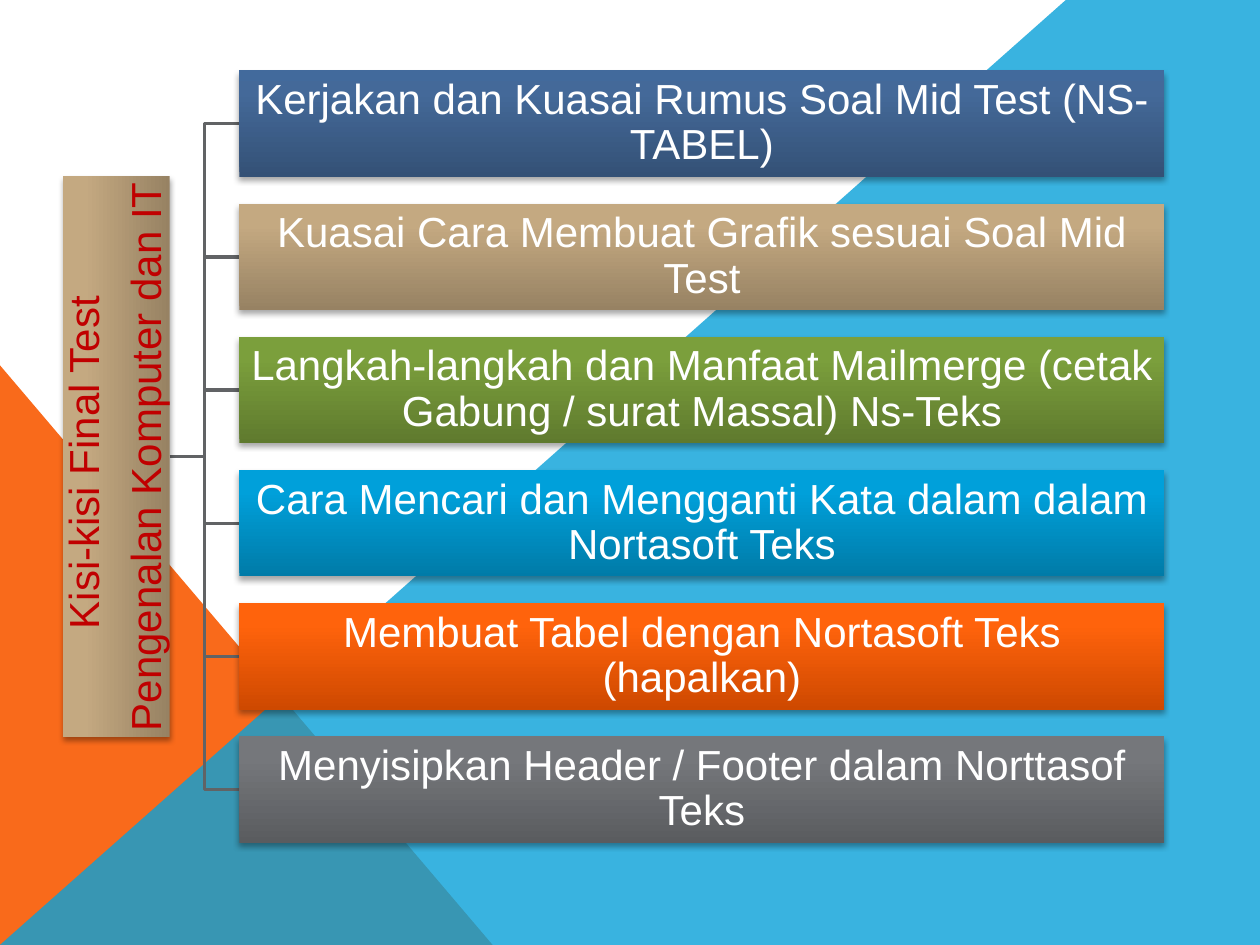
from lxml.etree import SubElement
from pptx import Presentation
from pptx.dml.color import RGBColor
from pptx.enum.shapes import MSO_SHAPE
from pptx.enum.text import MSO_ANCHOR, PP_ALIGN
from pptx.oxml.ns import qn
from pptx.util import Pt

WIDTH, HEIGHT = 720, 540
BAR_LEFT, BAR_TOP, BAR_WIDTH, BAR_HEIGHT = 136.8, 40.2, 528.6, 60.9
BAR_STEP = BAR_HEIGHT * 1.25
ROOT_X, ROOT_LENGTH = 66.6, 320.4

TAN = ("978263", "C4A981", "C6AA80")
ROOT_LINES = ["Kisi-kisi Final Test ", "Pengenalan Komputer dan IT"]
TOPICS = [
    ("Kerjakan dan Kuasai Rumus Soal Mid Test (NS-TABEL)",
     ("345176", "446999", "426A9C")),
    ("Kuasai Cara Membuat Grafik sesuai Soal Mid Test", TAN),
    ("Langkah-langkah dan Manfaat Mailmerge (cetak Gabung / surat Massal) Ns-Teks",
     ("5F7A2E", "7B9F3C", "7CA13B")),
    ("Cara Mencari dan Mengganti Kata dalam dalam Nortasoft Teks",
     ("007BA8", "00A0DA", "00A0DB")),
    ("Membuat Tabel dengan Nortasoft Teks (hapalkan)",
     ("CE4900", "FF630C", "FF640E")),
    ("Menyisipkan Header / Footer dalam Norttasof Teks",
     ("5A5C5F", "75777B", "75787C")),
]

FRAME_FORMAT = {
    "word_wrap": True, "vertical_anchor": MSO_ANCHOR.MIDDLE,
    "margin_left": Pt(1.2), "margin_right": Pt(1.2),
    "margin_top": Pt(1.2), "margin_bottom": Pt(1.2),
}
PARA_FORMAT = {
    "alignment": PP_ALIGN.CENTER, "line_spacing": 0.9, "space_after": Pt(9.5),
}
FONT_FORMAT = {"name": "Arial", "size": Pt(24)}


def color(value):
    return RGBColor.from_string(value)


def apply_format(target, values):
    for name, value in values.items():
        setattr(target, name, value)


def add_color_xml(parent, value, alpha=None):
    node = SubElement(parent, qn("a:srgbClr"), val=value)
    if alpha is not None:
        SubElement(node, qn("a:alpha"), val=str(alpha * 1000))


def fill_solid(shape, value):
    shape.shadow.inherit = False
    shape.fill.solid()
    shape.fill.fore_color.rgb = color(value)
    shape.line.fill.background()


def fill_gradient(shape, colors):
    shape.fill.gradient()
    shape.fill.gradient_angle = 90
    stops = shape._element.spPr.find(qn("a:gradFill")).find(qn("a:gsLst"))
    for stop in list(stops):
        stops.remove(stop)
    for position, value in zip((0, 80, 100), colors):
        stop = SubElement(stops, qn("a:gs"), pos=str(position * 1000))
        add_color_xml(stop, value)


def add_shadow(shape):
    shape.shadow.inherit = False
    effects = shape._element.spPr.find(qn("a:effectLst"))
    shadow = SubElement(effects, qn("a:outerShdw"), blurRad=str(Pt(3.1)),
                        dist=str(Pt(1.8)), dir="5400000", rotWithShape="0")
    add_color_xml(shadow, "000000", 35)


def add_outline(page, points, close):
    points = [(Pt(x), Pt(y)) for x, y in points]
    builder = page.shapes.build_freeform(*points[0])
    builder.add_line_segments(points[1:], close=close)
    return builder.convert_to_shape()


def add_background(page):
    triangle = page.shapes.add_shape(
        MSO_SHAPE.RIGHT_TRIANGLE, 0, Pt(208.8), Pt(281.5), Pt(331.2))
    fill_solid(triangle, "F96A1B")
    corners = [(0, HEIGHT), (609.1, 0), (WIDTH, 0), (WIDTH, HEIGHT)]
    wedge = add_outline(page, corners, True)
    fill_solid(wedge, "08A1D9")
    fill = wedge._element.spPr.find(qn("a:solidFill"))
    SubElement(fill[0], qn("a:alpha"), val="80000")


def add_branch(page, start, end):
    middle = (start[0] + end[0]) / 2
    branch = add_outline(
        page, [start, (middle, start[1]), (middle, end[1]), end], False)
    branch.shadow.inherit = False
    branch.fill.background()
    branch.line.color.rgb = color("616365")
    branch.line.width = Pt(2)


def add_box(page, left, top, width, lines, colors, text_color, rotation=0):
    box = page.shapes.add_shape(
        MSO_SHAPE.RECTANGLE, Pt(left), Pt(top), Pt(width), Pt(BAR_HEIGHT))
    box.rotation = rotation
    fill_gradient(box, colors)
    box.line.fill.background()
    add_shadow(box)
    frame = box.text_frame
    apply_format(frame, FRAME_FORMAT)
    for index, line in enumerate(lines):
        para = frame.add_paragraph() if index else frame.paragraphs[0]
        apply_format(para, PARA_FORMAT)
        span = para.add_run()
        span.text = line
        apply_format(span.font, FONT_FORMAT)
        span.font.color.rgb = color(text_color)


def main():
    deck = Presentation()
    deck.slide_width, deck.slide_height = Pt(WIDTH), Pt(HEIGHT)
    page = deck.slides.add_slide(deck.slide_layouts[6])
    add_background(page)

    # Branches from the root to each topic
    tops = [BAR_TOP + index * BAR_STEP for index in range(len(TOPICS))]
    root_y = (tops[0] + tops[-1] + BAR_HEIGHT) / 2
    for top in reversed(tops):
        add_branch(page, (ROOT_X + BAR_HEIGHT / 2, root_y),
                   (BAR_LEFT, top + BAR_HEIGHT / 2))

    # Root, turned to read upwards
    add_box(page, ROOT_X - ROOT_LENGTH / 2, root_y - BAR_HEIGHT / 2,
            ROOT_LENGTH, ROOT_LINES, TAN, "C00000", 270)

    # Topics
    for top, (text, colors) in zip(tops, TOPICS):
        add_box(page, BAR_LEFT, top, BAR_WIDTH, [text], colors, "FFFFFF")

    deck.save("out.pptx")


if __name__ == "__main__":
    main()
